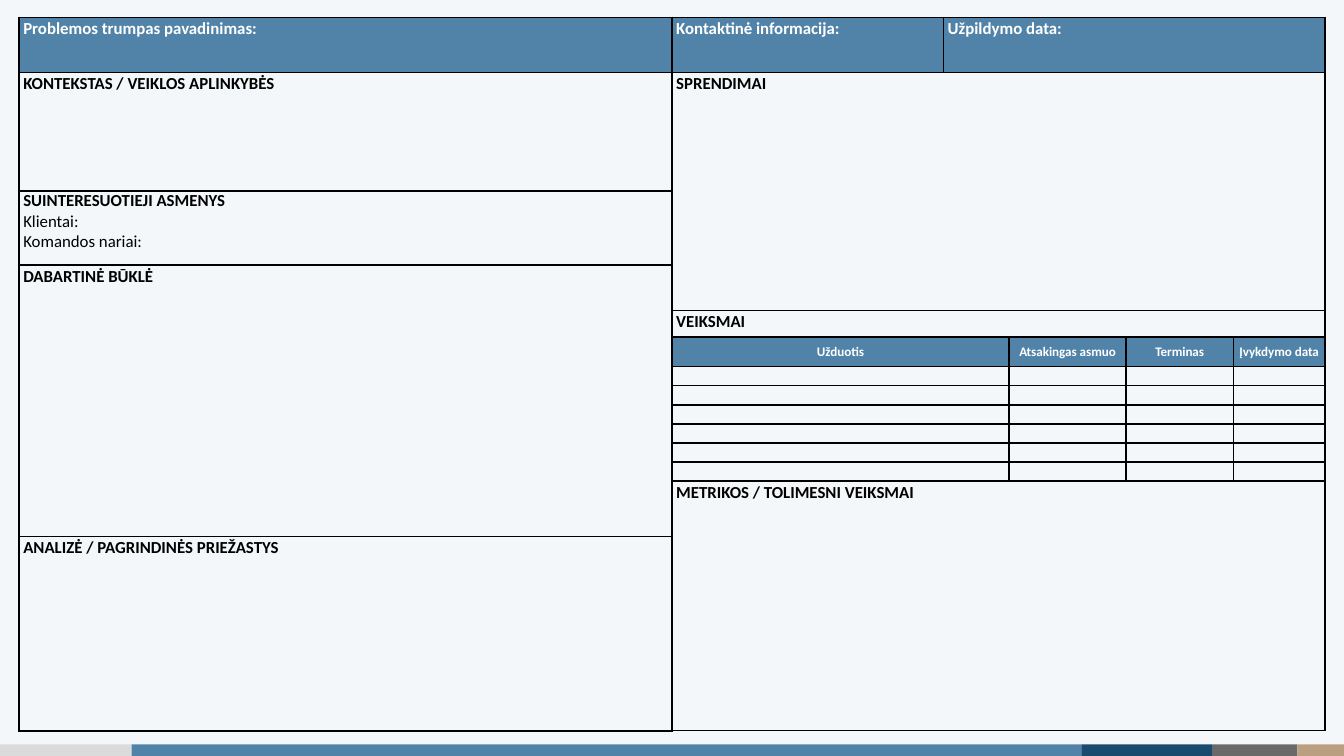
from lxml import etree
from pptx import Presentation
from pptx import util as u
from pptx.dml.color import RGBColor
from pptx.enum import shapes, text
from pptx.oxml.ns import qn

BLUE, BLACK, WHITE = "5183A8", "000000", "FFFFFF"


def color(value):
    return RGBColor.from_string(value)


def write(cell, content, size=9, ink=BLACK, align=text.PP_ALIGN.LEFT, spacing=1.07):
    for number, line in enumerate(content.split("\n")):
        frame = cell.text_frame
        paragraph = frame.add_paragraph() if number else frame.paragraphs[0]
        paragraph.alignment = align
        paragraph.line_spacing = spacing
        if line:
            run = paragraph.add_run()
            run.text = line
            run.font.name = "Calibri"
            run.font.size = u.Pt(size)
            run.font.bold = number == 0
            run.font.color.rgb = color(ink)
        etree.SubElement(paragraph._p, qn("a:endParaRPr"), sz=str(size * 100))


presentation = Presentation()
presentation.slide_width = u.Cm(25.4)
presentation.slide_height = u.Cm(14.29)
slide = presentation.slides.add_slide(presentation.slide_layouts[6])
slide.background.fill.solid()
slide.background.fill.fore_color.rgb = color("F4F7F9")

bar_edges = [0, 2.49, 20.44, 22.91, 24.52, 25.4]
bar_fills = ["DBDBDB", BLUE, "184B6E", "696969", "BAA081"]
for left, right, fill in zip(bar_edges, bar_edges[1:], bar_fills):
    bar = slide.shapes.add_shape(shapes.MSO_SHAPE.RECTANGLE, u.Cm(left), u.Cm(14.07),
                                 u.Cm(right - left), u.Cm(0.22))
    bar.shadow.inherit = False
    bar.fill.solid()
    bar.fill.fore_color.rgb = color(fill)
    bar.line.fill.background()

tables = [
    {
        "left": 0.36,
        "columns": [12.34],
        "rows": [1.04, 2.24, 1.4, 5.13, 3.68],
        "header_rows": [0],
        "merges": [],
        "texts": {
            (0, 0): "Problemos trumpas pavadinimas:",
            (1, 0): "KONTEKSTAS / VEIKLOS APLINKYBĖS",
            (2, 0): "SUINTERESUOTIEJI ASMENYS\nKlientai:\nKomandos nariai:",
            (3, 0): "DABARTINĖ BŪKLĖ",
            (4, 0): "ANALIZĖ / PAGRINDINĖS PRIEŽASTYS",
        },
    },
    {
        "left": 12.7,
        "columns": [5.13, 1.24, 2.21, 2.03, 1.73],
        "rows": [1.04, 4.5, 0.5, 0.56] + [0.36] * 6 + [4.72],
        "header_rows": [0, 3],
        "merges": [(0, 1, 4)] + [(row, 0, 4) for row in (1, 2, 10)]
                  + [(row, 0, 1) for row in range(3, 10)],
        "texts": {
            (0, 0): "Kontaktinė informacija:",
            (0, 1): "Užpildymo data:",
            (1, 0): "SPRENDIMAI",
            (2, 0): "VEIKSMAI",
            (3, 0): "Užduotis",
            (3, 2): "Atsakingas asmuo",
            (3, 3): "Terminas",
            (3, 4): "Įvykdymo data",
            (10, 0): "METRIKOS / TOLIMESNI VEIKSMAI",
        },
    },
]

for layout in tables:
    columns, rows = layout["columns"], layout["rows"]
    table = slide.shapes.add_table(len(rows), len(columns), u.Cm(layout["left"]), u.Cm(0.33),
                                   u.Cm(sum(columns)), u.Cm(sum(rows))).table
    table.first_row = table.horz_banding = False
    for column, width in zip(table.columns, columns):
        column.width = u.Cm(width)
    for row, height in zip(table.rows, rows):
        row.height = u.Cm(height)
    for row, first, last in layout["merges"]:
        table.cell(row, first).merge(table.cell(row, last))

    for row in range(len(rows)):
        header = row in layout["header_rows"]
        task_header = header and row > 0
        for column in range(len(columns)):
            cell = table.cell(row, column)
            cell.margin_left = cell.margin_right = u.Cm(0.08)
            cell.margin_top = cell.margin_bottom = 0
            if header:
                cell.fill.solid()
                cell.fill.fore_color.rgb = color(BLUE)
            else:
                cell.fill.background()
            if task_header:
                cell.vertical_anchor = text.MSO_ANCHOR.MIDDLE
            content = layout["texts"].get((row, column), "")
            write(cell, content,
                  size=7 if task_header or not content else 9,
                  ink=WHITE if header else BLACK,
                  align=text.PP_ALIGN.CENTER if task_header else text.PP_ALIGN.LEFT,
                  spacing=1.0 if "\n" in content else 1.07)
            properties = cell._tc.get_or_add_tcPr()
            for position, side in enumerate(["lnL", "lnR", "lnT", "lnB"]):
                border = etree.Element(qn("a:" + side), w=str(u.Pt(1)))
                fill = etree.SubElement(border, qn("a:solidFill"))
                etree.SubElement(fill, qn("a:srgbClr"), val=BLACK)
                properties.insert(position, border)

presentation.save("out.pptx")
